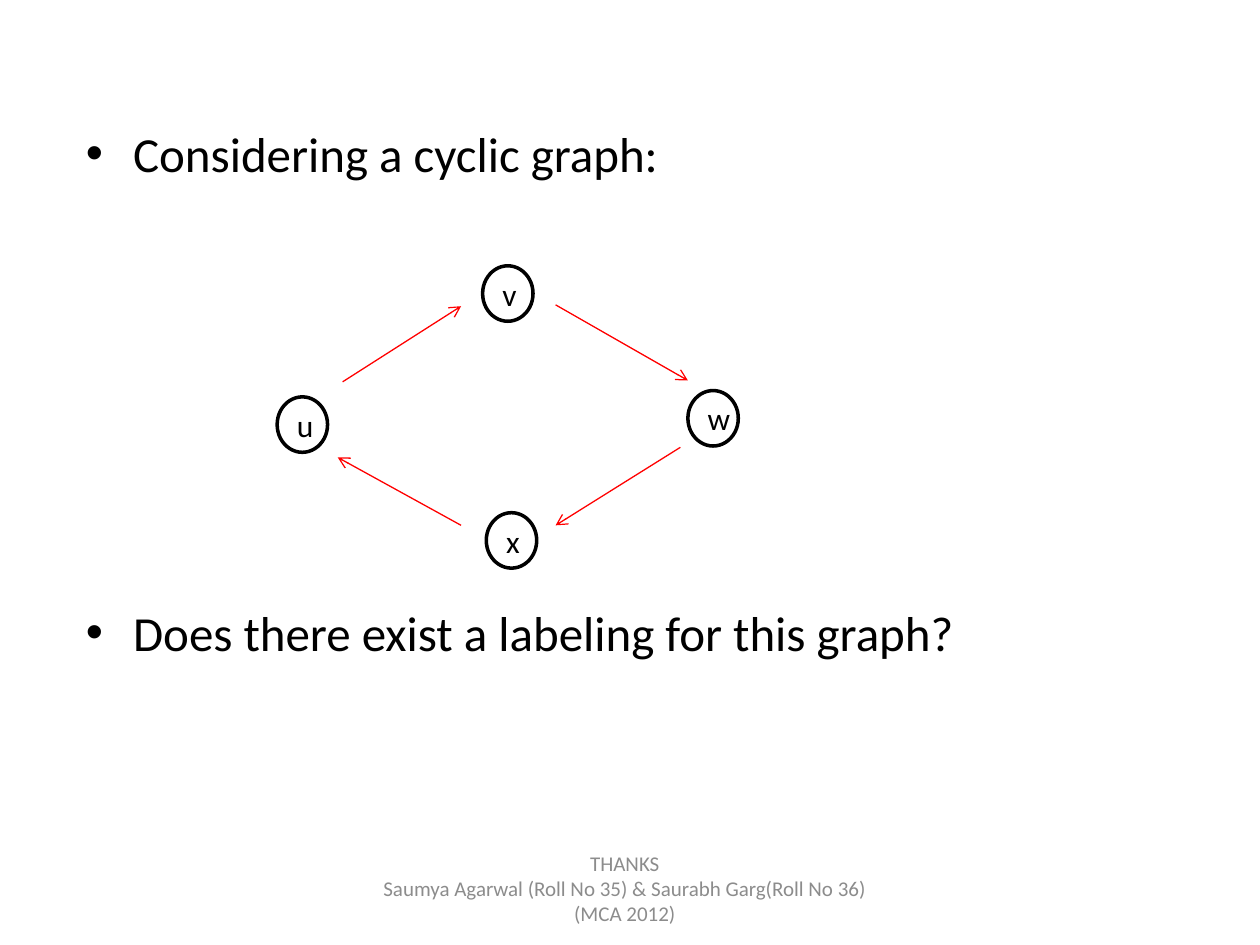
from lxml import etree
from pptx import Presentation
from pptx.dml.color import RGBColor
from pptx.enum import shapes, text
from pptx.oxml import ns
from pptx.util import Pt


def color(value):
    return RGBColor.from_string(value)


class GraphSlide:
    font = "Calibri"
    ink, paper, edge_red, footer_gray = "000000", "FFFFFF", "FF0000", "8C8C8C"
    node_width, node_height = 28.8, 31.7

    def __init__(self, deck):
        self.slide = deck.slides.add_slide(deck.slide_layouts[6])

    def add_words(self, paragraph, words, size, hue):
        run = paragraph.add_run()
        run.text = words
        run.font.name = self.font
        run.font.size = Pt(size)
        run.font.color.rgb = color(hue)

    def paragraphs(self, frame, lines):
        for index, line in enumerate(lines):
            yield (frame.add_paragraph() if index else frame.paragraphs[0]), line

    def frame(self, left, top, width, height):
        box = self.slide.shapes.add_textbox(Pt(left), Pt(top), Pt(width), Pt(height))
        box.text_frame.word_wrap = True
        return box.text_frame

    def bullets(self, left, top, width, height, lines, gap):
        frame = self.frame(left, top, width, height)
        for paragraph, line in self.paragraphs(frame, lines):
            props = paragraph._p.get_or_add_pPr()
            props.set("marL", str(Pt(27)))
            props.set("indent", str(-Pt(27)))
            etree.SubElement(props, ns.qn("a:buFont"), typeface="Arial")
            etree.SubElement(props, ns.qn("a:buChar"), char="•")
            if line != lines[0]:
                paragraph.space_before = Pt(gap)
            self.add_words(paragraph, line, 28, self.ink)

    def footer(self, left, top, width, height, lines):
        frame = self.frame(left, top, width, height)
        frame.vertical_anchor = text.MSO_ANCHOR.MIDDLE
        for paragraph, line in self.paragraphs(frame, lines):
            paragraph.alignment = text.PP_ALIGN.CENTER
            self.add_words(paragraph, line, 12, self.footer_gray)

    def node(self, label, left, top):
        node = self.slide.shapes.add_shape(
            shapes.MSO_SHAPE.OVAL, Pt(left), Pt(top),
            Pt(self.node_width), Pt(self.node_height))
        node.shadow.inherit = False
        node.fill.solid()
        node.fill.fore_color.rgb = color(self.paper)
        node.line.color.rgb = color(self.ink)
        node.line.width = Pt(2)
        node.text_frame.vertical_anchor = text.MSO_ANCHOR.MIDDLE
        paragraph = node.text_frame.paragraphs[0]
        paragraph.alignment = text.PP_ALIGN.CENTER
        self.add_words(paragraph, label, 18, self.ink)

    def edge(self, start, end):
        edge = self.slide.shapes.add_connector(
            shapes.MSO_CONNECTOR.STRAIGHT, *map(Pt, start + end))
        edge.line.color.rgb = color(self.edge_red)
        edge.line.width = Pt(0.75)
        outline = edge._element.spPr.find(ns.qn("a:ln"))
        etree.SubElement(outline, ns.qn("a:tailEnd"), type="arrow")
        etree.SubElement(edge._element.spPr, ns.qn("a:effectLst"))


def main():
    deck = Presentation()
    deck.slide_width, deck.slide_height = Pt(720), Pt(540)
    graph = GraphSlide(deck)

    # Statement above the graph, question below it
    graph.bullets(42, 67, 648, 440, [
        "Considering a cyclic graph:",
        "Does there exist a labeling for this graph?",
    ], gap=240)

    # Directed cycle u -> v -> w -> x -> u
    cycle_edges = [
        ((195.8, 218.2), (263.5, 175)),
        ((317.5, 174.2), (393.1, 217.4)),
        ((388.8, 255.6), (317.5, 300.2)),
        ((263.5, 300.2), (193, 261.4)),
    ]
    for start, end in cycle_edges:
        graph.edge(start, end)
    cycle_nodes = {"u": (158.4, 226.8), "v": (275.8, 151.9),
                   "w": (393.1, 223.2), "x": (277.9, 293)}
    for label, (left, top) in cycle_nodes.items():
        graph.node(label, left, top)

    # Footer
    graph.footer(204, 486, 306, 43.2, [
        "THANKS",
        "Saumya Agarwal (Roll No 35) & Saurabh Garg(Roll No 36) (MCA 2012)",
    ])

    deck.save("out.pptx")


if __name__ == "__main__":
    main()
